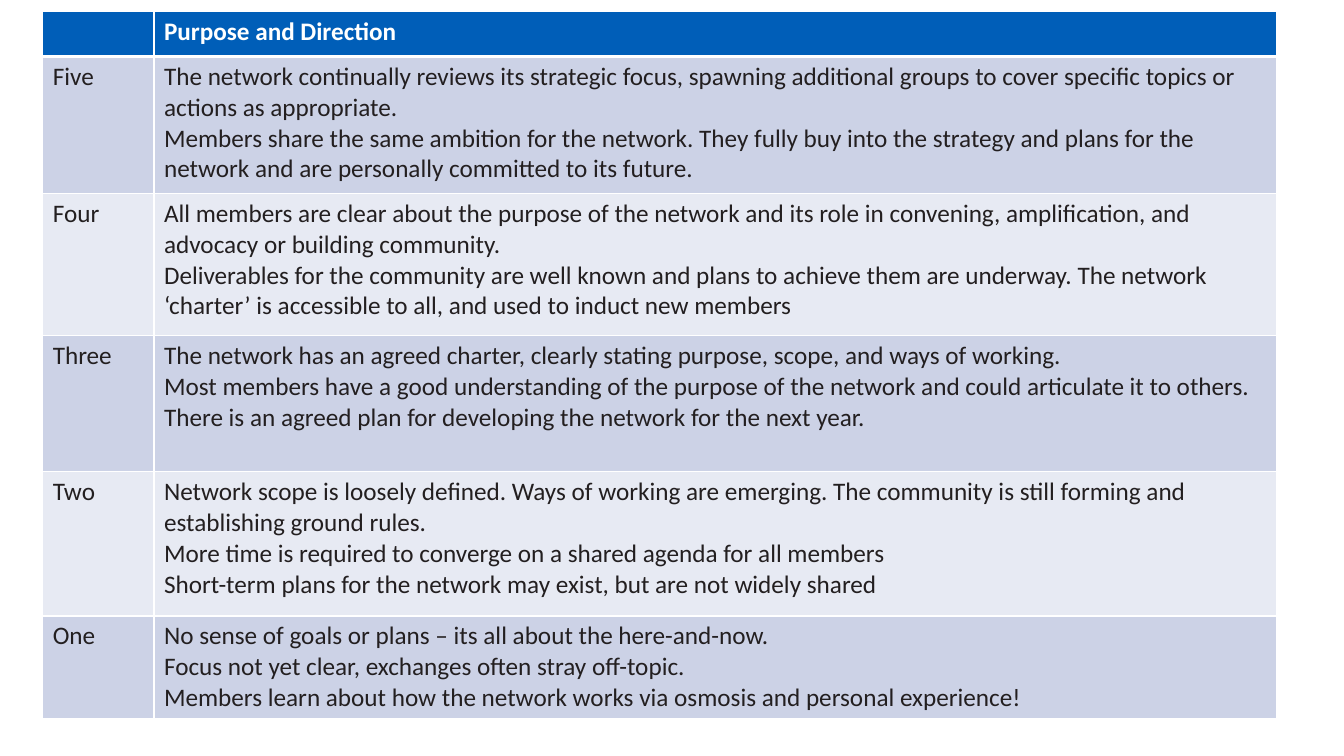
from lxml.etree import SubElement
from pptx import Presentation
from pptx.dml.color import RGBColor
from pptx.oxml.ns import qn
from pptx.util import Pt

HEADER = ["", "Purpose and Direction"]
LEVELS = [
    ("Five", 97.9, [
        "The network continually reviews its strategic focus, spawning additional groups "
        "to cover specific topics or actions as appropriate.",
        "Members share the same ambition for the network. They fully buy into the strategy "
        "and plans for the network and are personally committed to its future.",
    ]),
    ("Four", 101.5, [
        "All members are clear about the purpose of the network and its role in convening, "
        "amplification, and advocacy or building community.",
        "Deliverables for the community are well known and plans to achieve them are underway. "
        "The network ‘charter’ is accessible to all, and used to induct new members",
    ]),
    ("Three", 97.2, [
        "The network has an agreed charter, clearly stating purpose, scope, and ways of working.",
        "Most members have a good understanding of the purpose of the network and could "
        "articulate it to others.",
        "There is an agreed plan for developing the network for the next year.",
    ]),
    ("Two", 103, [
        "Network scope is loosely defined. Ways of working are emerging. The community is "
        "still forming and establishing ground rules.",
        "More time is required to converge on a shared agenda for all members",
        "Short-term plans for the network may exist, but are not widely shared",
    ]),
    ("One", 73, [
        "No sense of goals or plans – its all about the here-and-now.",
        "Focus not yet clear, exchanges often stray off-topic.",
        "Members learn about how the network works via osmosis and personal experience!",
    ]),
]


def color(value):
    return RGBColor.from_string(value)


def write(frame, paragraphs, font="Calibri", size=18, ink="231F20", bold=False):
    for index, text in enumerate(paragraphs):
        paragraph = frame.paragraphs[0] if index == 0 else frame.add_paragraph()
        paragraph.font.size = Pt(size)
        if text:
            run = paragraph.add_run()
            run.text = text
            run.font.name = font
            run.font.size = Pt(size)
            run.font.bold = bold
            run.font.color.rgb = color(ink)


class MaturitySlide:
    white = "FFFFFF"
    header_fill = "005EB8"
    bands = ("CCD2E6", "E7EAF3")
    thin, thick = 1, 3

    def __init__(self, deck):
        self.slide = deck.slides.add_slide(deck.slide_layouts[6])

    def borders(self, cell, top, bottom):
        properties = cell._tc.get_or_add_tcPr()
        widths = {"a:lnL": self.thin, "a:lnR": self.thin, "a:lnT": top, "a:lnB": bottom}
        for position, (side, width) in enumerate(widths.items()):
            line = SubElement(properties, qn(side), w=str(Pt(width)))
            fill = SubElement(line, qn("a:solidFill"))
            SubElement(fill, qn("a:srgbClr"), val=self.white)
            properties.insert(position, line)

    def cell(self, cell, paragraphs, fill, top, bottom, **text_format):
        cell.fill.solid()
        cell.fill.fore_color.rgb = color(fill)
        self.borders(cell, top, bottom)
        write(cell.text_frame, paragraphs, **text_format)

    def table(self, left, top, widths, header_height):
        heights = [header_height] + [height for _, height, _ in LEVELS]
        grid = self.slide.shapes.add_table(
            len(heights), len(widths), Pt(left), Pt(top), Pt(sum(widths)), Pt(sum(heights))
        ).table
        for column, width in zip(grid.columns, widths):
            column.width = Pt(width)
        for row, height in zip(grid.rows, heights):
            row.height = Pt(height)

        for column, title in enumerate(HEADER):
            self.cell(grid.cell(0, column), [title], self.header_fill,
                      self.thin, self.thick, ink=self.white, bold=True)
        for row, (level, _, statements) in enumerate(LEVELS, start=1):
            band = self.bands[(row - 1) % 2]
            upper = self.thick if row == 1 else self.thin
            for column, paragraphs in enumerate(([level], statements)):
                self.cell(grid.cell(row, column), paragraphs, band, upper, self.thin)


def main():
    deck = Presentation()
    deck.slide_width, deck.slide_height = Pt(960), Pt(540)
    MaturitySlide(deck).table(left=30.5, top=8, widths=(79.5, 802), header_height=32.4)
    deck.save("out.pptx")


if __name__ == "__main__":
    main()
